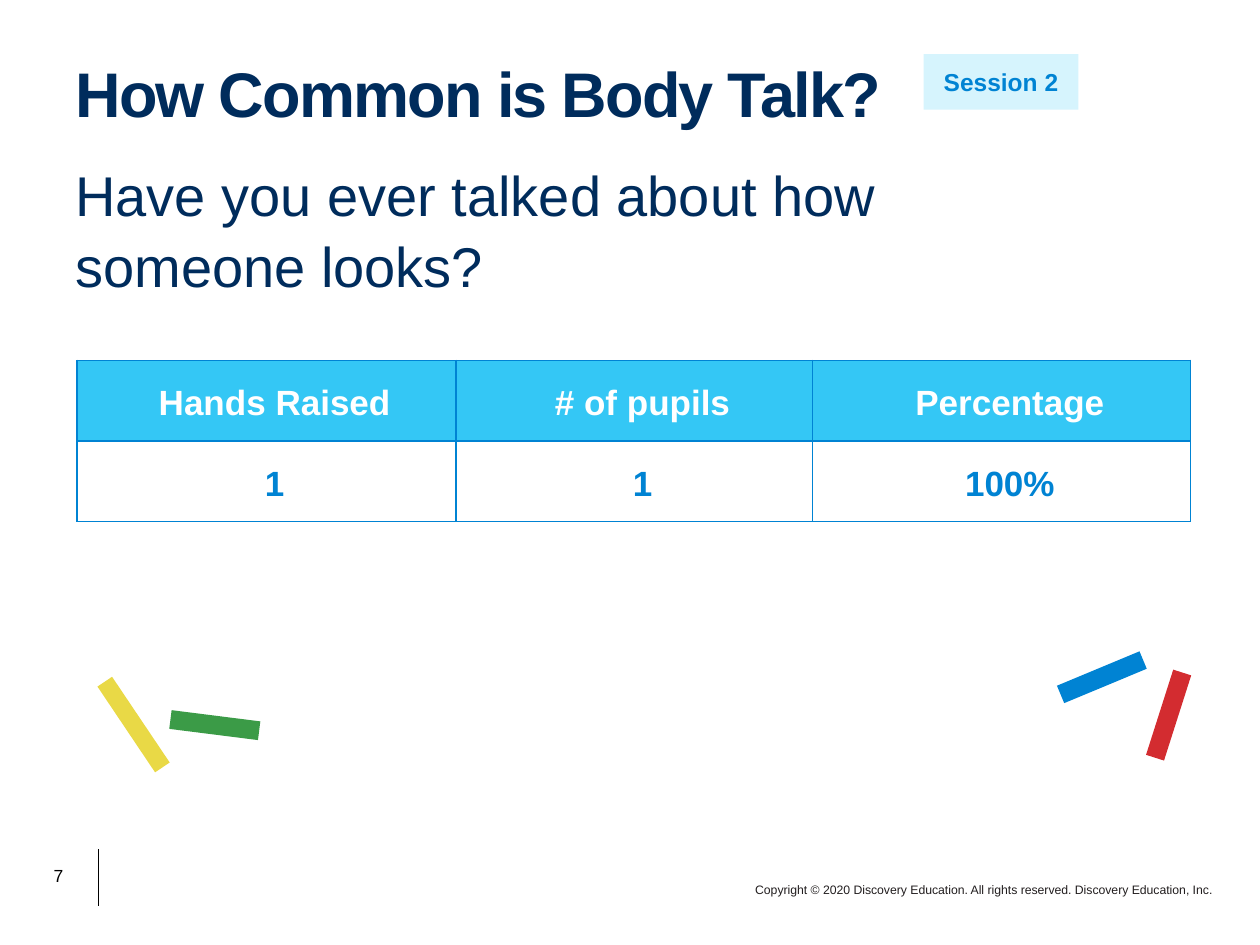
from lxml.etree import SubElement
from pptx import Presentation
from pptx.dml.color import RGBColor
from pptx.enum.shapes import MSO_CONNECTOR, MSO_SHAPE
from pptx.enum.text import MSO_ANCHOR, PP_ALIGN
from pptx.oxml.ns import qn
from pptx.util import Inches, Pt

COLORS = {
    "navy": "002C5C",
    "blue": "0083D3",
    "sky": "34C7F5",
    "pale": "D6F4FD",
    "green": "3B9B47",
    "yellow": "E9D946",
    "red": "D32C30",
    "white": "FFFFFF",
    "black": "000000",
    "ink": "221E1F",
}
TABLE_ROWS = [
    ("Hands Raised", "# of pupils", "Percentage"),
    ("1", "1", "100%"),
]
ROW_STYLES = [("sky", "white"), ("white", "blue")]
COLUMN_WIDTHS = (3.01, 2.83, 3)
STICKS = [
    (1.35, 5.68, 0.71, 0.15, 7.2, "green"),
    (0.65, 5.68, 0.82, 0.14, 236.1, "yellow"),
    (8.39, 5.3, 0.71, 0.15, 337.4, "blue"),
    (8.92, 5.6, 0.71, 0.15, 287.7, "red"),
]


def rgb(name):
    return RGBColor.from_string(COLORS[name])


def write(frame, text, size, color, bold=False, align=PP_ALIGN.LEFT, line_spacing=None):
    """Fill a text frame with one styled paragraph and return the paragraph."""
    para = frame.paragraphs[0]
    para.text = text
    para.alignment = align
    para.line_spacing = line_spacing
    para.font.name = "Arial"
    para.font.size = Pt(size)
    para.font.bold = bold
    para.font.color.rgb = rgb(color)
    return para


def add_text(page, position, text, size, color, anchor=MSO_ANCHOR.TOP, **style):
    box = page.shapes.add_textbox(*map(Inches, position))
    box.text_frame.word_wrap = True
    box.text_frame.vertical_anchor = anchor
    return write(box.text_frame, text, size, color, **style)


def add_rectangle(page, position, color, rotation=0):
    box = page.shapes.add_shape(MSO_SHAPE.RECTANGLE, *map(Inches, position))
    box.shadow.inherit = False
    box.fill.solid()
    box.fill.fore_color.rgb = rgb(color)
    box.line.fill.background()
    box.rotation = rotation
    return box


def add_badge(page, position, text):
    frame = add_rectangle(page, position, "pale").text_frame
    frame.margin_top = frame.margin_bottom = Inches(0.1)
    frame.vertical_anchor = MSO_ANCHOR.MIDDLE
    write(frame, text, 14, "blue", bold=True, align=PP_ALIGN.CENTER)


def add_divider(page):
    line = page.shapes.add_connector(
        MSO_CONNECTOR.STRAIGHT, Inches(0.78), Inches(6.74), Inches(0.78), Inches(7.19)
    )
    line.line.color.rgb = rgb("black")
    line.line.width = Pt(0.5)
    SubElement(line._element.spPr, qn("a:effectLst"))


def set_borders(cell, color):
    """Draw 1 pt borders; call before setting the fill, which must follow them."""
    properties = cell._tc.get_or_add_tcPr()
    for side in ("lnL", "lnR", "lnT", "lnB"):
        border = SubElement(properties, qn(f"a:{side}"), w=str(Pt(1)))
        fill = SubElement(border, qn("a:solidFill"))
        SubElement(fill, qn("a:srgbClr"), val=COLORS[color])


def style_cell(cell, text, fill, color):
    set_borders(cell, "blue")
    cell.fill.solid()
    cell.fill.fore_color.rgb = rgb(fill)
    cell.vertical_anchor = MSO_ANCHOR.MIDDLE
    cell.margin_left, cell.margin_right = Inches(0.2), Inches(0.07)
    cell.margin_top = cell.margin_bottom = Inches(0.1)
    write(cell.text_frame, text, 20, color, bold=True,
          align=PP_ALIGN.CENTER, line_spacing=1.15)


def add_results_table(page):
    table = page.shapes.add_table(
        len(TABLE_ROWS), len(COLUMN_WIDTHS),
        Inches(0.61), Inches(2.86), Inches(sum(COLUMN_WIDTHS)), Inches(1.28),
    ).table
    for column, width in zip(table.columns, COLUMN_WIDTHS):
        column.width = Inches(width)
    for row, texts, (fill, color) in zip(table.rows, TABLE_ROWS, ROW_STYLES):
        row.height = Inches(0.64)
        for cell, text in zip(row.cells, texts):
            style_cell(cell, text, fill, color)


def main():
    deck = Presentation()
    deck.slide_width, deck.slide_height = Inches(10), Inches(7.5)
    page = deck.slides.add_slide(deck.slide_layouts[6])

    add_divider(page)
    add_text(page, (0.19, 6.82, 0.41, 0.27), "7", 10, "black", align=PP_ALIGN.RIGHT)
    add_text(
        page, (5.08, 6.95, 4.64, 0.22),
        "Copyright © 2020 Discovery Education. All rights reserved. Discovery Education, Inc.",
        7, "ink", align=PP_ALIGN.RIGHT,
    )
    title = add_text(page, (0.5, 0.4, 8.44, 0.74), "How Common is Body Talk?", 36, "navy",
                     anchor=MSO_ANCHOR.MIDDLE, bold=True, line_spacing=0.9)
    title.runs[0].font._element.set("spc", "-100")
    add_text(page, (0.5, 1.19, 8.44, 4.76), "Have you ever talked about how someone looks?",
             32, "navy", line_spacing=1.06)
    for *position, rotation, color in STICKS:
        add_rectangle(page, position, color, rotation)
    add_results_table(page)
    add_badge(page, (7.33, 0.43, 1.23, 0.44), "Session 2")

    deck.save("out.pptx")


if __name__ == "__main__":
    main()
